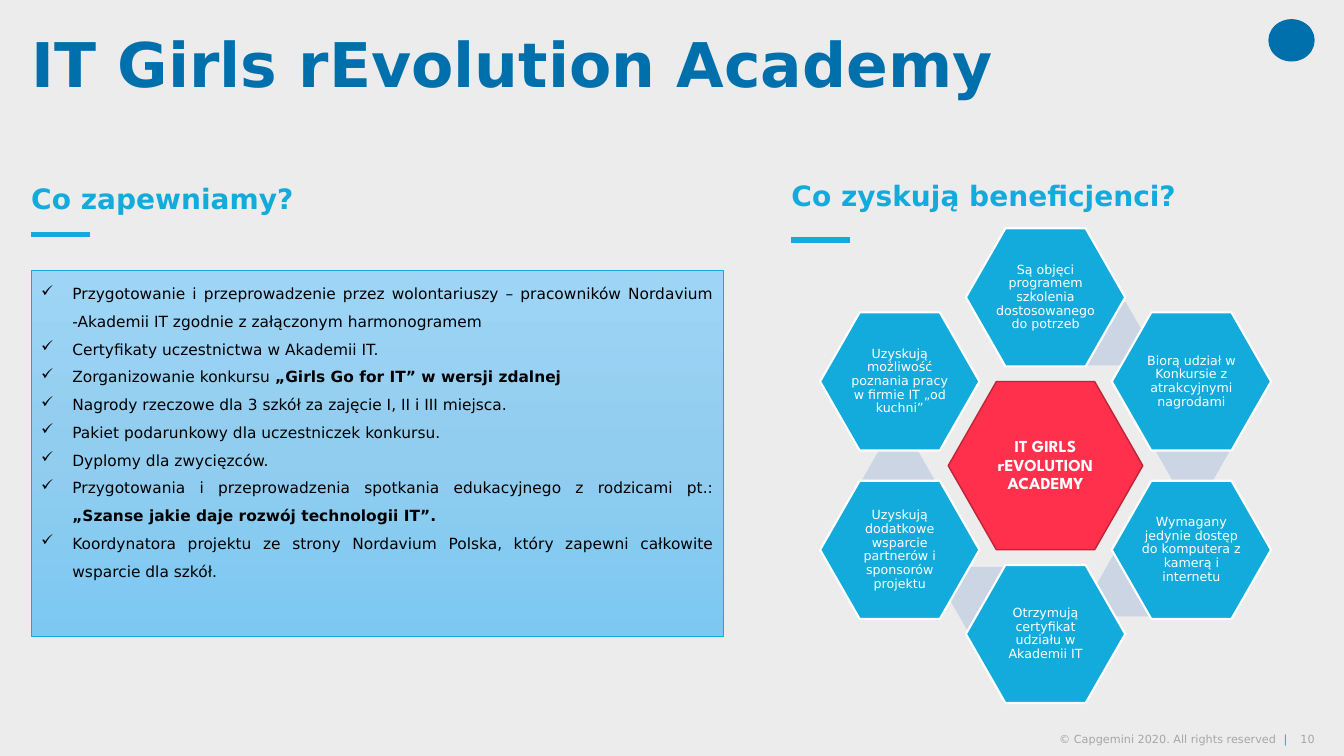
from copy import deepcopy
from math import cos, radians, sin

from pptx import Presentation
from pptx.dml.color import RGBColor
from pptx.enum.shapes import MSO_CONNECTOR as CONN, MSO_SHAPE as SHAPE
from pptx.enum.text import MSO_ANCHOR as ANCHOR, PP_ALIGN as ALIGN
from pptx.oxml.ns import qn
from pptx.util import Inches, Pt
from lxml.etree import SubElement

COLORS = {
    "background": "ECECEC", "navy": "0070AD", "cyan": "12ABDB", "red": "FF304C",
    "red_edge": "BD2438", "link": "CCD5E3", "white": "FFFFFF", "black": "000000",
    "grey": "A6A6A6", "sky_top": "9ED5F6", "sky_mid": "91CDEF", "sky_low": "7CC8F3",
}
FONT = "DejaVu Sans"

OFFERS = [
    [("Przygotowanie i przeprowadzenie przez wolontariuszy – pracowników Nordavium "
      "-Akademii IT zgodnie z załączonym harmonogramem ", False)],
    [("Certyfikaty uczestnictwa w Akademii IT.", False)],
    [("Zorganizowanie konkursu ", False), ("„Girls Go for IT” w wersji zdalnej", True)],
    [("Nagrody rzeczowe dla 3 szkół za zajęcie I, II i III miejsca.", False)],
    [("Pakiet podarunkowy dla uczestniczek konkursu.", False)],
    [("Dyplomy dla zwycięzców.", False)],
    [("Przygotowania i przeprowadzenia spotkania edukacyjnego z rodzicami pt.: ", False),
     ("„Szanse jakie daje rozwój technologii IT”.", True)],
    [("Koordynatora projektu ze strony Nordavium Polska, który zapewni całkowite "
      "wsparcie dla szkół.", False)],
]
BENEFITS = [
    "Są objęci programem szkolenia dostosowanego do potrzeb",
    "Biorą udział w Konkursie z atrakcyjnymi nagrodami",
    "Wymagany jedynie dostęp do komputera z kamerą i internetu",
    "Otrzymują certyfikat udziału w Akademii IT",
    "Uzyskują dodatkowe wsparcie partnerów i sponsorów projektu",
    "Uzyskują możliwość poznania pracy w firmie IT „od kuchni”",
]
LINK_OFFSETS = [(0.61, -1.31), (1.46, -0.14), (0.87, 1.18), (-0.59, 1.32), (-1.46, 0.15)]


def rgb(name):
    """Return the named palette colour."""
    return RGBColor.from_string(COLORS[name])


def add_run(p, text, size, color, bold=False, font=FONT):
    """Append one formatted run to a paragraph."""
    r = p.add_run()
    r.text = text
    r.font.size, r.font.bold, r.font.name = Pt(size), bold, font
    r.font.color.rgb = rgb(color)


def set_frame(tf, anchor, margins):
    """Set wrapping, anchor and left, top, right, bottom margins."""
    tf.word_wrap, tf.vertical_anchor = True, anchor
    tf.margin_left, tf.margin_top, tf.margin_right, tf.margin_bottom = map(Inches, margins)


def add_text(s, x, y, w, h, margins=(0, 0, 0, 0)):
    """Add a middle-anchored text box and return its first paragraph."""
    tf = s.shapes.add_textbox(*map(Inches, (x, y, w, h))).text_frame
    set_frame(tf, ANCHOR.MIDDLE, margins)
    return tf.paragraphs[0]


def add_title(s, x, y, w, h):
    """Place and format the title placeholder."""
    title = s.shapes.title
    title.left, title.top, title.width, title.height = map(Inches, (x, y, w, h))
    set_frame(title.text_frame, ANCHOR.MIDDLE, (0, 0, 0, 0))
    p = title.text_frame.paragraphs[0]
    p.alignment, p.line_spacing = ALIGN.LEFT, 0.9
    add_run(p, "IT Girls rEvolution Academy", 44, "navy", True)


def add_heading(s, x, y, w, rule_y, text):
    """Add a section heading with its short underline."""
    p = add_text(s, x, y, w, 0.33, (0, 0.05, 0.1, 0.05))
    add_run(p, text, 20, "cyan", True)
    rule = s.shapes.add_connector(CONN.STRAIGHT, *map(Inches, (x, rule_y, x + 0.58, rule_y)))
    rule.line.color.rgb, rule.line.width = rgb("cyan"), Pt(3.75)
    SubElement(rule._element.spPr, qn("a:effectLst"))


def add_offers(s, x, y, w, h):
    """Add the gradient panel with the ticked list."""
    panel = s.shapes.add_shape(SHAPE.RECTANGLE, *map(Inches, (x, y, w, h)))
    panel.shadow.inherit = False
    panel.line.color.rgb, panel.line.width = rgb("cyan"), Pt(0.5)
    panel.fill.gradient()
    panel.fill.gradient_angle = 270
    stops = panel._element.spPr.find(".//" + qn("a:gsLst"))
    stops.append(deepcopy(stops[0]))
    for i, (stop, name) in enumerate(zip(panel.fill.gradient_stops,
                                         ("sky_top", "sky_mid", "sky_low"))):
        stop.position, stop.color.rgb = i / 2, rgb(name)
    tf = panel.text_frame
    set_frame(tf, ANCHOR.TOP, (0.1, 0.05, 0.1, 0.05))
    for i, runs in enumerate(OFFERS):
        p = tf.add_paragraph() if i else tf.paragraphs[0]
        pPr = p._p.get_or_add_pPr()
        pPr.set("marL", str(Inches(0.31)))
        pPr.set("indent", str(-Inches(0.31)))
        SubElement(pPr, qn("a:buChar"), char="✓")
        p.alignment, p.line_spacing = ALIGN.JUSTIFY, 1.5
        for text, bold in runs:
            add_run(p, text, 11, "black", bold)


def add_hexagon(s, cx, cy, w, h, fill, edge=None, edge_width=1.5):
    """Add a hexagon around a centre point."""
    hexagon = s.shapes.add_shape(SHAPE.HEXAGON, *map(Inches, (cx - w / 2, cy - h / 2, w, h)))
    hexagon.adjustments[0] = 0.286
    hexagon.shadow.inherit = False
    hexagon.fill.solid()
    hexagon.fill.fore_color.rgb = rgb(fill)
    if edge:
        hexagon.line.color.rgb, hexagon.line.width = rgb(edge), Pt(edge_width)
    else:
        hexagon.line.fill.background()
    return hexagon


def label_hexagon(hexagon, text, size, margin, bold=False, font=FONT):
    """Write a centred white label inside a hexagon."""
    set_frame(hexagon.text_frame, ANCHOR.MIDDLE, (margin,) * 4)
    p = hexagon.text_frame.paragraphs[0]
    p.alignment, p.line_spacing = ALIGN.CENTER, 0.9
    add_run(p, text, size, "white", bold, font)


def add_benefits(s, cx, cy, radius):
    """Add the ring of benefits around the academy hexagon."""
    core = add_hexagon(s, cx, cy, 1.93, 1.67, "red", "red_edge", 1)
    label_hexagon(core, "IT GIRLS rEVOLUTION ACADEMY", 12, 0.02, True, "League Spartan")
    for dx, dy in LINK_OFFSETS:
        add_hexagon(s, cx + dx, cy + dy, 0.73, 0.63, "link")
    for i, text in enumerate(BENEFITS):
        angle = radians(60 * i - 90)
        benefit = add_hexagon(s, cx + radius * cos(angle), cy + radius * sin(angle),
                              1.58, 1.37, "cyan", "white")
        label_hexagon(benefit, text, 9, 0.01)


def add_footer(s, x, y, w, h):
    """Add the copyright line and the page number, aligned right."""
    number_w = 0.27
    p = add_text(s, x, y, w - number_w, h)
    p.alignment = ALIGN.RIGHT
    add_run(p, "© Capgemini 2020. All rights reserved  ", 8, "grey")
    add_run(p, "|", 8, "cyan")
    p = add_text(s, x + w - number_w, y, number_w, h)
    p.alignment = ALIGN.RIGHT
    add_run(p, "10", 8, "grey")


def add_emblem(s, x, y, w, h):
    """Add a plain oval in the corner."""
    emblem = s.shapes.add_shape(SHAPE.OVAL, *map(Inches, (x, y, w, h)))
    emblem.shadow.inherit = False
    emblem.fill.solid()
    emblem.fill.fore_color.rgb = rgb("navy")
    emblem.line.fill.background()


def main():
    """Build the slide and save it."""
    prs = Presentation()
    prs.slide_width, prs.slide_height = Inches(13.33), Inches(7.5)
    s = prs.slides.add_slide(prs.slide_layouts[5])
    s.background.fill.solid()
    s.background.fill.fore_color.rgb = rgb("background")
    add_emblem(s, 12.58, 0.19, 0.46, 0.42)
    add_footer(s, 9.86, 7.27, 3.18, 0.13)
    add_title(s, 0.31, 0.07, 12.17, 1.21)
    add_heading(s, 0.31, 1.8, 2.89, 2.33, "Co zapewniamy?")
    add_offers(s, 0.31, 2.68, 6.87, 3.63)
    add_heading(s, 7.85, 1.77, 5.35, 2.38, "Co zyskują beneficjenci?")
    add_benefits(s, 10.37, 4.62, 1.67)
    prs.save("out.pptx")


if __name__ == "__main__":
    main()
